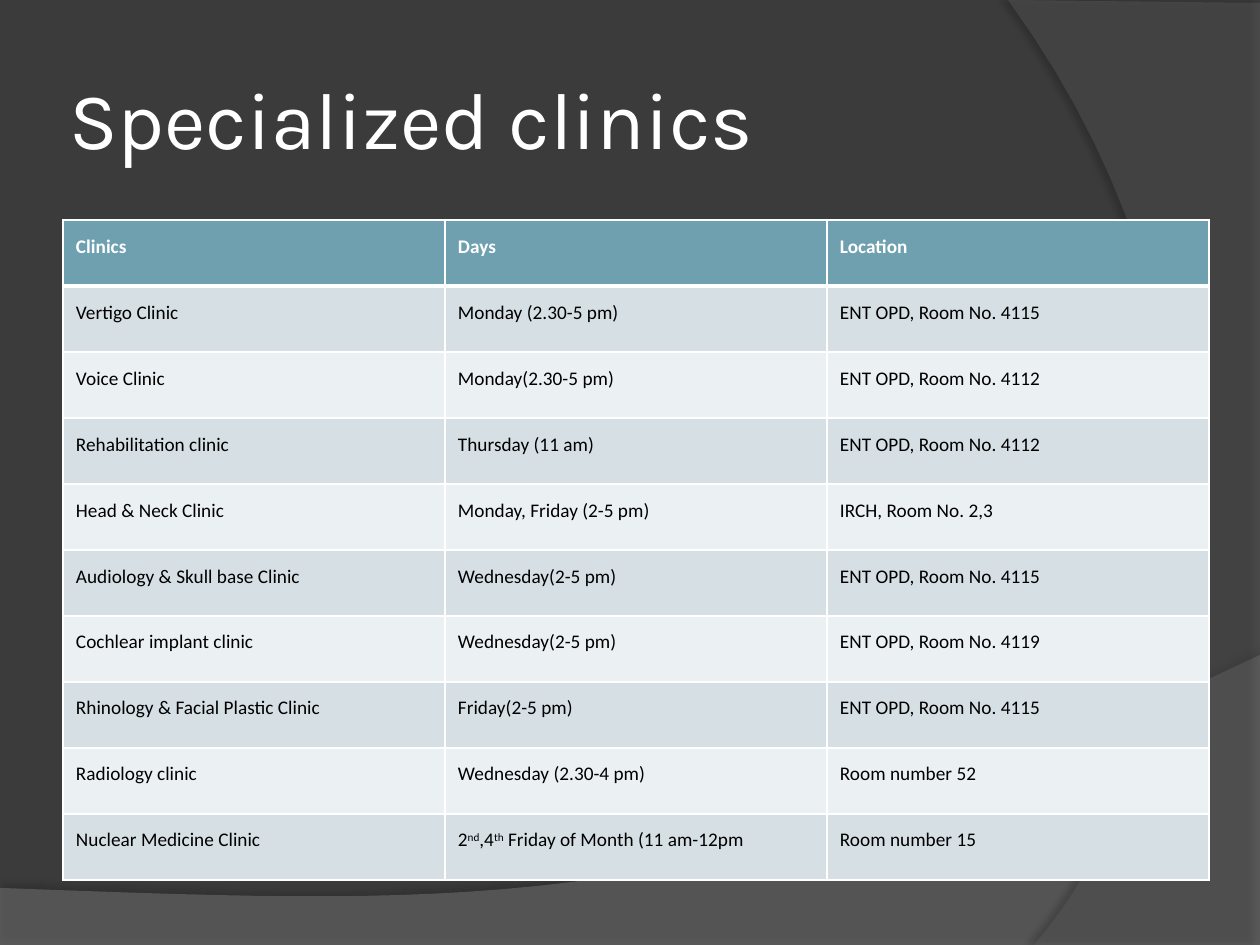
from dataclasses import dataclass

from pptx import Presentation
from pptx.dml.color import RGBColor
from pptx.enum.text import MSO_ANCHOR
from pptx.oxml import parse_xml
from pptx.oxml.ns import nsdecls
from pptx.util import Pt

MIDDLE = MSO_ANCHOR.MIDDLE
EMU_PER_PX = 914400 / 126
BLANK = 6


@dataclass(frozen=True)
class Theme:
    background: str = "3B3B3B"
    wave: str = "7F7F7F"
    arc: str = "5E5E5E"
    shadow: str = "000000"
    light: str = "FFFFFF"
    dark: str = "000000"
    header: str = "6EA0B0"
    bands: tuple = ("D5DFE4", "EBF0F2")
    title_font: str = "Karla"
    body_font: str = "Calibri"
    title_size: int = 46
    body_size: int = 11


def px(n):
    return round(n * EMU_PER_PX)


def rgb(color):
    return RGBColor.from_string(color)


def bezier(p0, p1, p2, p3, steps=32):
    """Points along a cubic curve, without its starting point."""
    points = []
    for i in range(1, steps + 1):
        t = i / steps
        u = 1 - t
        points.append(tuple(u**3 * a + 3 * u * u * t * b + 3 * u * t * t * c + t**3 * d
                            for a, b, c, d in zip(p0, p1, p2, p3)))
    return points


class SlideBuilder:
    def __init__(self, prs, theme):
        self.theme = theme
        self.s = prs.slides.add_slide(prs.slide_layouts[BLANK])
        fill = self.s.background.fill
        fill.solid()
        fill.fore_color.rgb = rgb(theme.background)

    def swoosh(self, corners, controls, end, color, opacity, shadow):
        """Translucent outline: straight corners, then a curve to end.

        shadow is opacity in percent, distance in points and angle in degrees.
        """
        points = corners + bezier(corners[-1], *controls, end)
        points = [(px(x), px(y)) for x, y in points]
        builder = self.s.shapes.build_freeform(*points[0])
        builder.add_line_segments(points[1:], close=True)
        sp = builder.convert_to_shape()
        sp.fill.solid()
        sp.fill.fore_color.rgb = rgb(color)
        sp.line.fill.background()
        srgb = sp._element.spPr.find(".//{*}solidFill/{*}srgbClr")
        srgb.append(parse_xml(f'<a:alpha {nsdecls("a")} val="{opacity * 1000}"/>'))
        alpha, distance, angle = shadow
        sp._element.spPr.append(parse_xml(
            f'<a:effectLst {nsdecls("a")}><a:outerShdw blurRad="{Pt(4)}" '
            f'dist="{Pt(distance)}" dir="{angle * 60000}" rotWithShape="0">'
            f'<a:srgbClr val="{self.theme.shadow}"><a:alpha val="{alpha * 1000}"/>'
            f'</a:srgbClr></a:outerShdw></a:effectLst>'))

    def title(self, text, x, y, w, h):
        tf = self.s.shapes.add_textbox(px(x), px(y), px(w), px(h)).text_frame
        tf.word_wrap = True
        tf.vertical_anchor = MIDDLE
        tf.margin_left = tf.margin_right = tf.margin_top = tf.margin_bottom = px(6)
        p = tf.paragraphs[0]
        p.text = text
        p.font.name = self.theme.title_font
        p.font.size = Pt(self.theme.title_size)
        p.font.color.rgb = rgb(self.theme.light)

    def table(self, rows, x, y, col_w, row_h):
        n_rows, n_cols = len(rows), len(rows[0])
        table = self.s.shapes.add_table(n_rows, n_cols, px(x), px(y),
                                        px(col_w * n_cols), px(row_h * n_rows)).table
        for column in table.columns:
            column.width = px(col_w)
        for row in table.rows:
            row.height = px(row_h)
        for i, row in enumerate(rows):
            for j, content in enumerate(row):
                self.cell(table.cell(i, j), content, i)

    def cell(self, cell, content, row):
        theme = self.theme
        is_header = row == 0
        self.borders(cell, top=3 if row == 1 else 1, bottom=3 if is_header else 1)
        cell.fill.solid()
        cell.fill.fore_color.rgb = rgb(theme.header if is_header else theme.bands[(row - 1) % 2])
        cell.margin_left = cell.margin_right = cell.margin_top = cell.margin_bottom = px(13)
        p = cell.text_frame.paragraphs[0]
        p.line_spacing = 1.07
        p.font.name = theme.body_font
        p.font.size = Pt(theme.body_size)
        p.font.bold = is_header
        p.font.color.rgb = rgb(theme.light if is_header else theme.dark)
        # Odd pieces between carets are superscript.
        for k, piece in enumerate(content.split("^")):
            r = p.add_run()
            r.text = piece
            if k % 2:
                r.font._element.set("baseline", "30000")

    def borders(self, cell, top, bottom):
        tcPr = cell._tc.get_or_add_tcPr()
        for side, width in (("L", 1), ("R", 1), ("T", top), ("B", bottom)):
            tcPr.append(parse_xml(
                f'<a:ln{side} {nsdecls("a")} w="{Pt(width)}"><a:solidFill>'
                f'<a:srgbClr val="{self.theme.light}"/></a:solidFill></a:ln{side}>'))


CLINICS = [
    ("Clinics", "Days", "Location"),
    ("Vertigo Clinic", "Monday (2.30-5 pm)", "ENT OPD, Room No. 4115"),
    ("Voice Clinic", "Monday(2.30-5 pm)", "ENT OPD, Room No. 4112"),
    ("Rehabilitation clinic", "Thursday (11 am)", "ENT OPD, Room No. 4112"),
    ("Head & Neck Clinic", "Monday, Friday (2-5 pm)", "IRCH, Room No. 2,3"),
    ("Audiology & Skull base Clinic", "Wednesday(2-5 pm)", "ENT OPD, Room No. 4115"),
    ("Cochlear implant clinic", "Wednesday(2-5 pm)", "ENT OPD, Room No. 4119"),
    ("Rhinology & Facial Plastic Clinic", "Friday(2-5 pm)", "ENT OPD, Room No. 4115"),
    ("Radiology clinic", "Wednesday (2.30-4 pm)", "Room number 52"),
    ("Nuclear Medicine Clinic", "2^nd^,4^th^ Friday of Month (11 am-12pm", "Room number 15"),
]


def main():
    prs = Presentation()
    prs.slide_width, prs.slide_height = px(1260), px(945)
    theme = Theme()
    slide = SlideBuilder(prs, theme)
    slide.swoosh([(0, 888), (0, 945), (1260, 945), (1260, 655)],
                 [(704, 919), (493, 906)], (0, 888), theme.wave, 45, (35, 3.5, 270))
    slide.swoosh([(1260, 3), (1260, 945), (1034, 945)],
                 [(1178, 780), (1283, 378)], (1008, 0), theme.arc, 40, (45, 4, 180))
    slide.title("Specialized clinics", 63, 38, 1029, 158)
    slide.table(CLINICS, 63, 220, 382, 66)
    prs.save("out.pptx")


if __name__ == "__main__":
    main()
